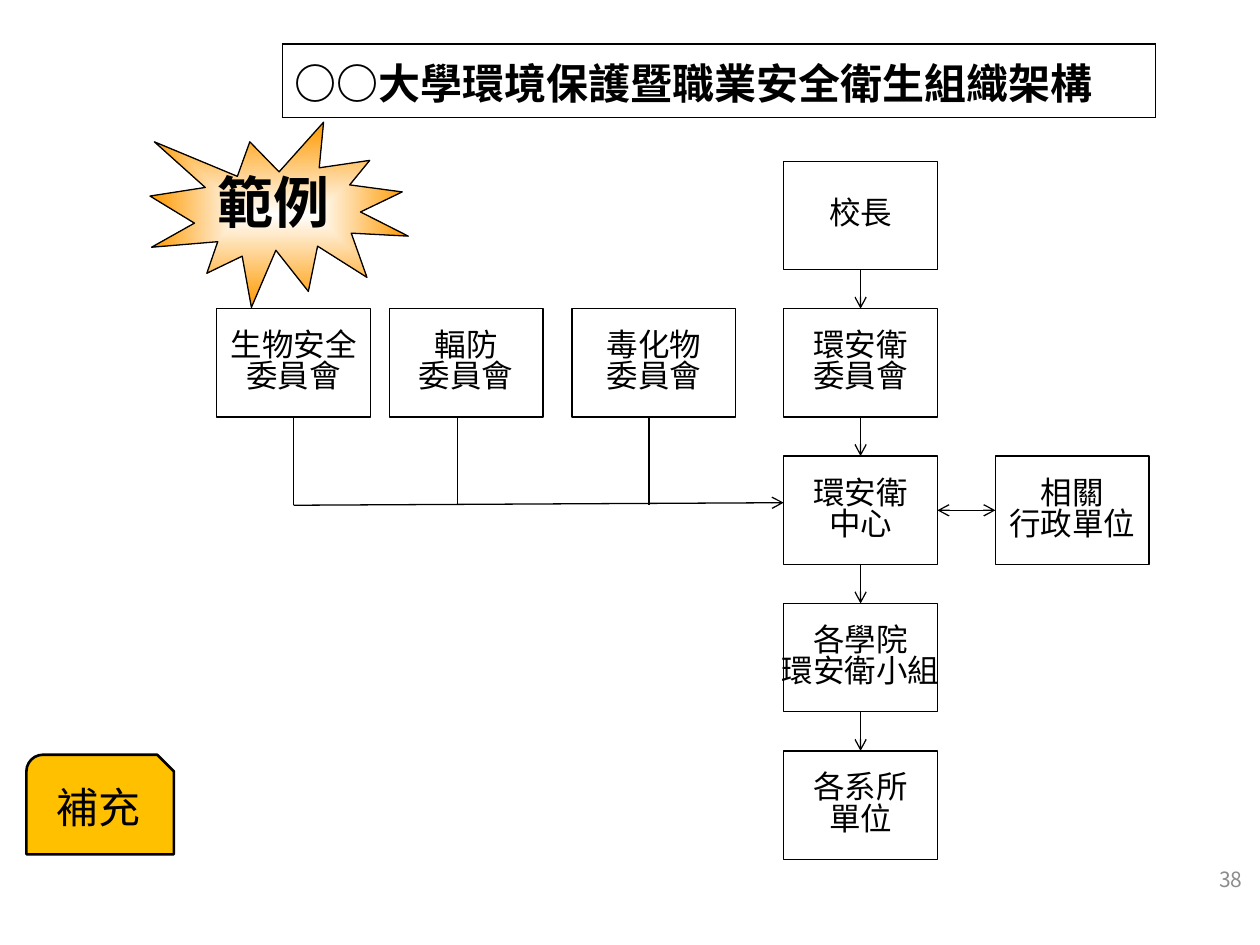
from dataclasses import dataclass

from lxml import etree
from pptx import Presentation
from pptx import util as u
from pptx.dml.color import RGBColor
from pptx.enum import shapes, text
from pptx.oxml.ns import qn


@dataclass(frozen=True)
class Theme:
    """Colours, fonts and sizes of the slide."""
    ink: str = "000000"
    paper: str = "FFFFFF"
    burst: str = "FF9900"
    tag: str = "FFC000"
    muted: str = "8C8C8C"
    font: str = "Noto Sans CJK SC"
    title_font: str = "Calibri"
    title: int = 24
    sample: int = 32
    box: int = 18
    number: int = 12
    thin: float = 0.75
    border: float = 1
    thick: float = 1.5
    leading: float = 0.83


T = Theme()
COLS = (1.72, 3.09, 4.54, 6.22, 7.9)
TOP, PITCH = 1.28, 1.17
BOX_W, BOX_H = 1.22, 0.86
BUS_Y = 4.01
DROPS = (2.33, 3.63, 5.15)
COMMITTEES = ("生物安全\n委員會", "輻防\n委員會", "毒化物\n委員會")
CHAIN = ("校長", "環安衛\n委員會", "環安衛\n中心", "各學院\n環安衛小組", "各系所\n單位")


def rgb(value):
    """Return a colour from its hex value."""
    return RGBColor.from_string(value)


def inches(*values):
    """Convert numbers to lengths."""
    return [u.Inches(v) for v in values]


def write(tf, words, size, font=T.font, color=T.ink, bold=False,
          align=text.PP_ALIGN.CENTER, leading=None):
    """Put words in a text frame and format the runs."""
    tf.text = words
    for p in tf.paragraphs:
        p.alignment = align
        p.line_spacing = leading
        for r in p.runs:
            r.font.size, r.font.bold, r.font.name = u.Pt(size), bold, font
            r.font.color.rgb = rgb(color)
            ea = etree.SubElement(r.font._element, qn("a:ea"))
            ea.set("typeface", T.font)


def add_label(s, box, words, size, **style):
    """Add a text box."""
    tf = s.shapes.add_textbox(*inches(*box)).text_frame
    tf.word_wrap = True
    write(tf, words, size, **style)
    return tf


def add_outlined(s, kind, box, width=T.thin, fill=None):
    """Add a flat preset shape with a black outline."""
    sp = s.shapes.add_shape(kind, *inches(*box))
    sp.shadow.inherit = False
    sp.line.color.rgb, sp.line.width = rgb(T.ink), u.Pt(width)
    if fill:
        sp.fill.solid()
        sp.fill.fore_color.rgb = rgb(fill)
    else:
        sp.fill.background()
    return sp


def add_unit(s, col, row, words, width=BOX_W):
    """Add an organisation box at a grid position."""
    box = (COLS[col], TOP + row * PITCH, width, BOX_H)
    sp = add_outlined(s, shapes.MSO_SHAPE.RECTANGLE, box)
    write(sp.text_frame, words, T.box, leading=T.leading)
    sp.text_frame.word_wrap = False
    sp.text_frame.vertical_anchor = text.MSO_ANCHOR.MIDDLE
    return sp


def add_line(s, start, end, *ends):
    """Add a straight line with arrowheads at the named ends."""
    line = s.shapes.add_connector(shapes.MSO_CONNECTOR.STRAIGHT, *inches(*start, *end))
    line.line.color.rgb, line.line.width = rgb(T.ink), u.Pt(T.thin)
    ln = line.line._get_or_add_ln()
    for name in ends:
        etree.SubElement(ln, qn(f"a:{name}")).set("type", "arrow")
    etree.SubElement(line._element.spPr, qn("a:effectLst"))
    return line


def link(s, first, site, last, end_site, *ends):
    """Join two boxes at their connection sites."""
    line = add_line(s, (0, 0), (1, 1), *ends)
    line.begin_connect(first, site)
    line.end_connect(last, end_site)


def add_heading(s, words):
    """Add the heading as a bordered table of one cell."""
    table = s.shapes.add_table(1, 1, *inches(2.24, 0.35, 6.93, 0.57)).table
    table.first_row = table.horz_banding = False
    cell = table.cell(0, 0)
    write(cell.text_frame, words, T.title, font=T.title_font, bold=True,
          align=text.PP_ALIGN.LEFT)
    cell.fill.background()
    tc_pr = cell._tc.get_or_add_tcPr()
    for i, side in enumerate("LRTB"):
        ln = etree.Element(qn(f"a:ln{side}"), w=str(u.Pt(T.border)))
        fill = etree.SubElement(ln, qn("a:solidFill"))
        etree.SubElement(fill, qn("a:srgbClr")).set("val", T.ink)
        tc_pr.insert(i, ln)


def add_burst(s, words):
    """Add the sample burst with a gradient that spreads from its centre."""
    sp = add_outlined(s, shapes.MSO_SHAPE.EXPLOSION1, (1.19, 0.97, 2.05, 1.47))
    sp.fill.gradient()
    for stop, color, place in zip(sp.fill.gradient_stops, (T.paper, T.burst), (0, 1)):
        stop.color.rgb, stop.position = rgb(color), place
    grad = sp._element.spPr.find(qn("a:gradFill"))
    spread = etree.Element(qn("a:path"), path="shape")
    etree.SubElement(spread, qn("a:fillToRect"), dict.fromkeys("ltrb", "50000"))
    grad.replace(grad.find(qn("a:lin")), spread)
    add_label(s, (1.63, TOP, 1.23, 0.64), words, T.sample, bold=True,
              align=text.PP_ALIGN.LEFT)


def add_chart_of_units(s):
    """Add the organisation boxes and the lines between them."""
    for col, words in enumerate(COMMITTEES):
        add_unit(s, col, 1, words, 1.3 if col == 2 else BOX_W)
    for x in DROPS:
        add_line(s, (x, TOP + PITCH + BOX_H), (x, BUS_Y))
    add_line(s, (DROPS[0], BUS_Y), (COLS[3], BUS_Y - 0.02), "tailEnd")
    chain = [add_unit(s, 3, row, words) for row, words in enumerate(CHAIN)]
    for upper, lower in zip(chain, chain[1:]):
        link(s, upper, 2, lower, 0, "tailEnd")
    office = add_unit(s, 4, 2, "相關\n行政單位")
    link(s, chain[2], 3, office, 1, "headEnd", "tailEnd")


def add_tag(s, words):
    """Add the supplement tag."""
    sp = add_outlined(s, shapes.MSO_SHAPE.SNIP_ROUND_RECTANGLE,
                      (0.21, 5.99, 1.17, 0.79), T.thick, T.tag)
    write(sp.text_frame, words, T.title)
    sp.text_frame.vertical_anchor = text.MSO_ANCHOR.MIDDLE


def main():
    """Build and save the slide."""
    prs = Presentation()
    prs.slide_width, prs.slide_height = inches(10, 7.5)
    s = prs.slides.add_slide(prs.slide_layouts[6])
    add_heading(s, "○○大學環境保護暨職業安全衛生組織架構")
    add_burst(s, "範例")
    add_chart_of_units(s)
    add_tag(s, "補充")
    tf = add_label(s, (7.63, 6.78, 2.33, 0.4), "38", T.number, color=T.muted,
                   align=text.PP_ALIGN.RIGHT)
    tf.vertical_anchor = text.MSO_ANCHOR.MIDDLE
    prs.save("out.pptx")


if __name__ == "__main__":
    main()
